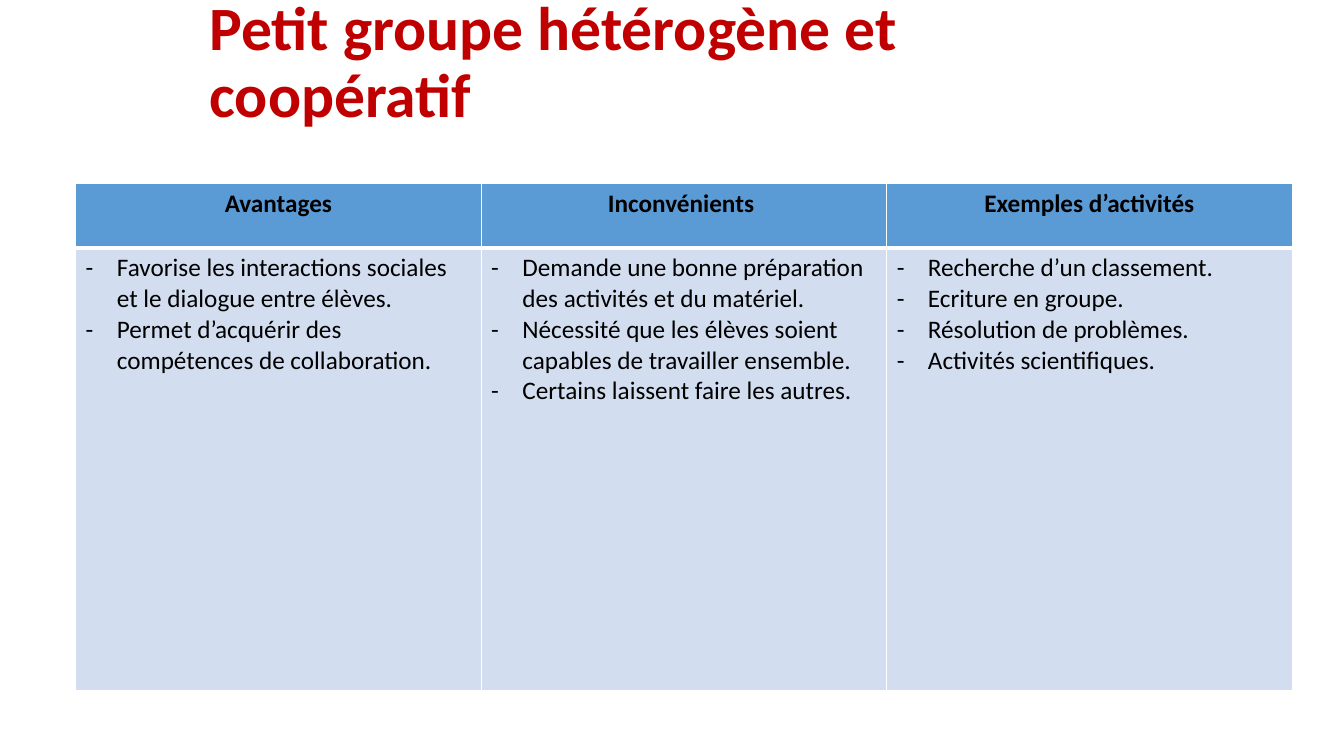
"""Build a slide that weighs up small mixed cooperative groups."""
from dataclasses import dataclass

from lxml import etree
from pptx import Presentation
from pptx.dml.color import RGBColor
from pptx.enum.text import MSO_ANCHOR, PP_ALIGN
from pptx.oxml.ns import qn
from pptx.table import _Cell
from pptx.text.text import TextFrame
from pptx.util import Inches, Pt

LEFT, CENTER = PP_ALIGN.LEFT, PP_ALIGN.CENTER
MIDDLE = MSO_ANCHOR.MIDDLE
WIDTH, HEIGHT = Inches(13.33), Inches(7.5)
COLS, ROWS = 160, 100


@dataclass(frozen=True)
class Theme:
    font: str = "Calibri"
    title: str = "C00000"
    ink: str = "000000"
    head: str = "5B9BD5"
    body: str = "D2DEEF"
    rule: str = "FFFFFF"
    large: int = 44
    small: int = 18
    thin: int = 1
    thick: int = 3


@dataclass(frozen=True)
class Box:
    left: float
    top: float
    width: float
    height: float

    def place(self) -> tuple[int, int, int, int]:
        return across(self.left), down(self.top), across(self.width), down(self.height)


@dataclass(frozen=True)
class Column:
    head: str
    items: tuple[str, ...]


THEME = Theme()
TITLE = Box(23.75, 3.07, 117, 10.8)
TABLE = Box(9, 24.27, 144.84, 67.07)
HEAD_ROWS = 8.53
COLUMNS = (
    Column("Avantages", (
        "Favorise les interactions sociales et le dialogue entre élèves.",
        "Permet d’acquérir des compétences de collaboration.",
    )),
    Column("Inconvénients ", (
        "Demande une bonne préparation des activités et du matériel.",
        "Nécessité que les élèves soient capables de travailler ensemble.",
        "Certains laissent faire les autres.",
    )),
    Column("Exemples d’activités", (
        "Recherche d’un classement.",
        "Ecriture en groupe.",
        "Résolution de problèmes.",
        "Activités scientifiques.",
    )),
)


def across(cols: float) -> int:
    return round(WIDTH * cols / COLS)


def down(rows: float) -> int:
    return round(HEIGHT * rows / ROWS)


def write(frame: TextFrame, *lines: str, size: int = THEME.small,
          color: str = THEME.ink, bold: bool = False, align: PP_ALIGN = LEFT,
          space: float = 1.0, dash: bool = False) -> None:
    frame.word_wrap = True
    for i, line in enumerate(lines):
        para = frame.add_paragraph() if i else frame.paragraphs[0]
        para.alignment, para.line_spacing = align, space
        run = para.add_run()
        run.text = line
        font = run.font
        font.name, font.size, font.bold = THEME.font, Pt(size), bold
        font.color.rgb = RGBColor.from_string(color)
        if dash:
            props = para._p.get_or_add_pPr()
            props.set("marL", str(Inches(0.31)))
            props.set("indent", str(-Inches(0.31)))
            etree.SubElement(props, qn("a:buFont"), typeface=THEME.font)
            etree.SubElement(props, qn("a:buChar"), char="-")


def paint(cell: _Cell, fill: str, top: int, base: int) -> None:
    props = cell._tc.get_or_add_tcPr()
    sides = {"L": THEME.thin, "R": THEME.thin, "T": top, "B": base}
    for side, width in sides.items():
        line = etree.SubElement(props, qn(f"a:ln{side}"), w=str(Pt(width)))
        solid = etree.SubElement(line, qn("a:solidFill"))
        etree.SubElement(solid, qn("a:srgbClr"), val=THEME.rule)
    cell.fill.solid()
    cell.fill.fore_color.rgb = RGBColor.from_string(fill)


def main() -> None:
    deck = Presentation()
    deck.slide_width, deck.slide_height = WIDTH, HEIGHT
    slide = deck.slides.add_slide(deck.slide_layouts[6])
    frame = slide.shapes.add_textbox(*TITLE.place()).text_frame
    frame.vertical_anchor = MIDDLE
    frame.margin_right = Inches(0.2)
    write(frame, "Petit groupe hétérogène et coopératif", size=THEME.large,
          color=THEME.title, bold=True, space=0.9)

    table = slide.shapes.add_table(2, len(COLUMNS), *TABLE.place()).table
    table.rows[0].height = down(HEAD_ROWS)
    table.rows[1].height = down(TABLE.height - HEAD_ROWS)
    for i, col in enumerate(COLUMNS):
        table.columns[i].width = across(TABLE.width / len(COLUMNS))
        head, body = table.cell(0, i), table.cell(1, i)
        write(head.text_frame, col.head, bold=True, align=CENTER)
        paint(head, THEME.head, THEME.thin, THEME.thick)
        write(body.text_frame, *col.items, dash=True)
        paint(body, THEME.body, THEME.thick, THEME.thin)
    deck.save("out.pptx")


if __name__ == "__main__":
    main()
